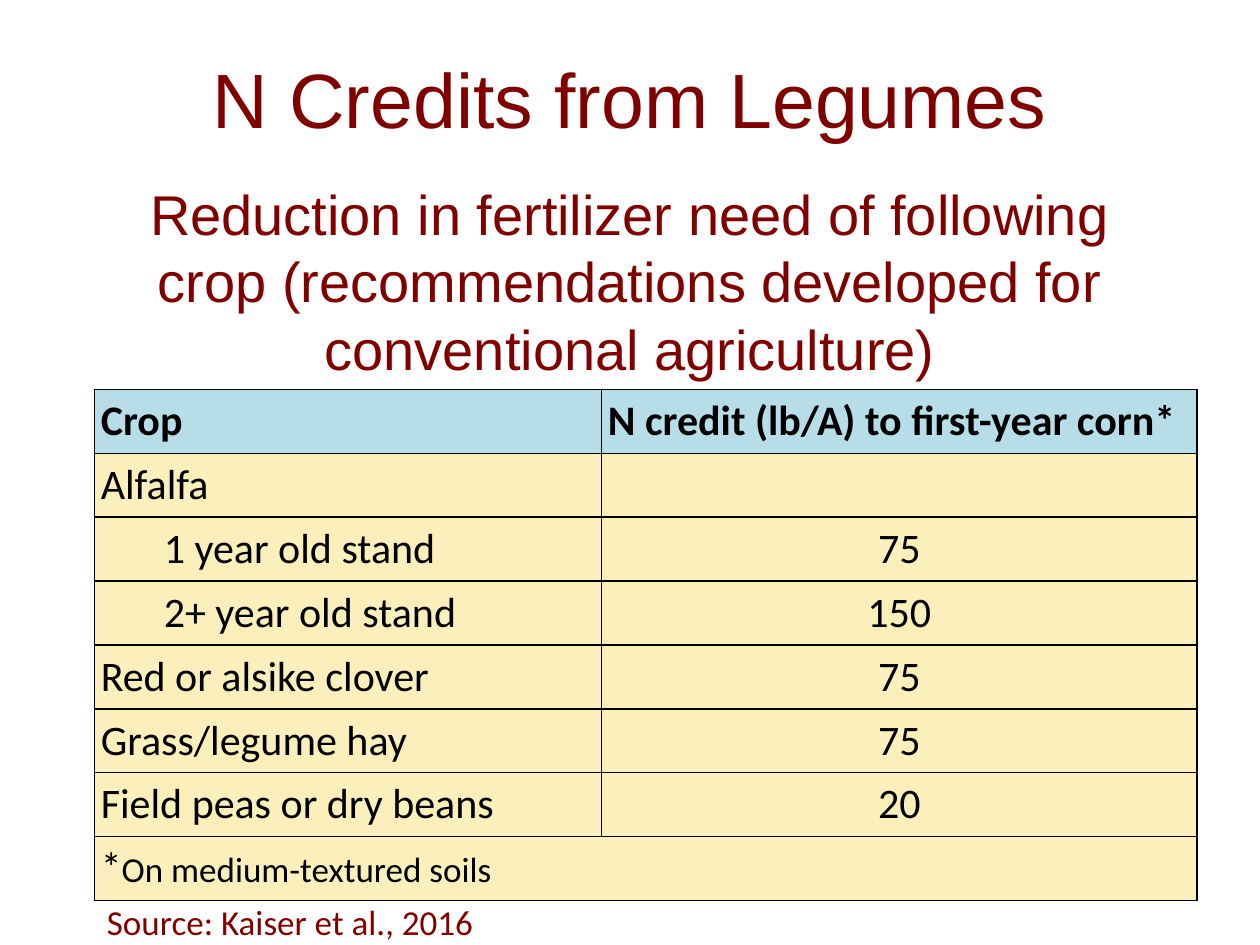
from pptx import Presentation
from pptx.dml.color import RGBColor
from pptx.enum.text import MSO_ANCHOR as Anchor, MSO_AUTO_SIZE as AutoSize, PP_ALIGN as Align
from pptx.oxml import parse_xml
from pptx.oxml.ns import nsdecls
from pptx.util import Inches, Pt

MAROON = RGBColor(0x80, 0x00, 0x00)
BLACK = RGBColor(0x00, 0x00, 0x00)
BLUE = RGBColor(0xB7, 0xDE, 0xE8)
CREAM = RGBColor(0xFB, 0xEF, 0xBB)

HEADER = ("Crop", "N credit (lb/A) to first-year corn*")
# crop, credit, indent level
CREDITS = [
    ("Alfalfa", "", 0),
    ("1 year old stand", "75", 1),
    ("2+ year old stand", "150", 1),
    ("Red or alsike clover", "75", 0),
    ("Grass/legume hay", "75", 0),
    ("Field peas or dry beans", "20", 0),
]
FOOTNOTE = ("*", "On medium-textured soils")


class SlideBuilder:
    """Places elements by percentages of the slide's width and height."""
    heading_font = "Arial"
    body_font = "Calibri"
    cell_size = 24
    note_size = 20
    cell_margin = Inches(0.05)
    indent = Inches(0.5)

    def __init__(self, prs):
        self.width, self.height = prs.slide_width, prs.slide_height
        self.s = prs.slides.add_slide(prs.slide_layouts[5])

    def box(self, x, y, w, h):
        return (round(x * self.width / 100), round(y * self.height / 100),
                round(w * self.width / 100), round(h * self.height / 100))

    def style(self, p, font, size, color, bold=False, align=Align.LEFT):
        p.alignment = align
        for r in p.runs:
            r.font.name, r.font.size, r.font.bold = font, Pt(size), bold
            r.font.color.rgb = color

    def title(self, text, *place):
        sp = self.s.shapes.title
        sp.left, sp.top, sp.width, sp.height = self.box(*place)
        tf = sp.text_frame
        tf.text, tf.vertical_anchor = text, Anchor.MIDDLE
        self.style(tf.paragraphs[0], self.heading_font, 44, MAROON, align=Align.CENTER)

    def text(self, text, *place, font, size, align=Align.LEFT, wrap=True):
        tf = self.s.shapes.add_textbox(*self.box(*place)).text_frame
        tf.text, tf.word_wrap = text, wrap
        tf.auto_size = AutoSize.NONE if wrap else AutoSize.SHAPE_TO_FIT_TEXT
        self.style(tf.paragraphs[0], font, size, MAROON, align=align)

    def cell(self, cell, text, fill, bold=False, align=Align.LEFT, level=0):
        cell.text, cell.vertical_anchor = text, Anchor.BOTTOM
        cell.margin_left = cell.margin_right = self.cell_margin
        cell.margin_top = cell.margin_bottom = self.cell_margin
        p = cell.text_frame.paragraphs[0]
        self.style(p, self.body_font, self.cell_size, BLACK, bold, align)
        if level:
            p.level = level
            pPr = p._p.get_or_add_pPr()
            pPr.set("marL", str(level * self.indent))
            pPr.set("indent", "0")
        tcPr = cell._tc.get_or_add_tcPr()
        for side in ("lnL", "lnR", "lnT", "lnB"):
            tcPr.append(parse_xml(
                f'<a:{side} {nsdecls("a")} w="{Pt(1)}"><a:solidFill>'
                f'<a:srgbClr val="{BLACK}"/></a:solidFill></a:{side}>'))
        cell.fill.solid()
        cell.fill.fore_color.rgb = fill

    def credit_table(self, *place, first_share):
        n_rows = len(CREDITS) + 2
        left, top, width, height = self.box(*place)
        table = self.s.shapes.add_table(n_rows, 2, left, top, width, height).table
        table.horz_banding = False
        first_width = round(width * first_share)
        table.columns[0].width = first_width
        table.columns[1].width = width - first_width

        for col, text in enumerate(HEADER):
            self.cell(table.cell(0, col), text, BLUE, bold=True)
        for row, (crop, credit, level) in enumerate(CREDITS, 1):
            self.cell(table.cell(row, 0), crop, CREAM, level=level)
            self.cell(table.cell(row, 1), credit, CREAM, align=Align.CENTER)

        mark, note = FOOTNOTE
        last = n_rows - 1
        for col, text in enumerate((mark, "")):
            self.cell(table.cell(last, col), text, CREAM)
        table.cell(last, 0).merge(table.cell(last, 1))
        p = table.cell(last, 0).text_frame.paragraphs[0]
        p.add_run().text = note
        self.style(p, self.body_font, self.cell_size, BLACK)
        p.runs[1].font.size = Pt(self.note_size)


def main():
    prs = Presentation()
    prs.slide_width, prs.slide_height = Inches(10), Inches(7.5)
    b = SlideBuilder(prs)
    b.title("N Credits from Legumes", 5, 2, 90, 16.67)
    b.credit_table(7.5, 41.2, 87.5, 53.33, first_share=0.46)
    b.text("Reduction in fertilizer need of following crop "
           "(recommendations developed for conventional agriculture)",
           6.25, 18.35, 87.5, 22.25, font=b.heading_font, size=32, align=Align.CENTER)
    b.text("Source: Kaiser et al., 2016", 7.5, 94.65, 31.4, 5.83,
           font=b.body_font, size=b.note_size, wrap=False)
    prs.save("out.pptx")


if __name__ == "__main__":
    main()
